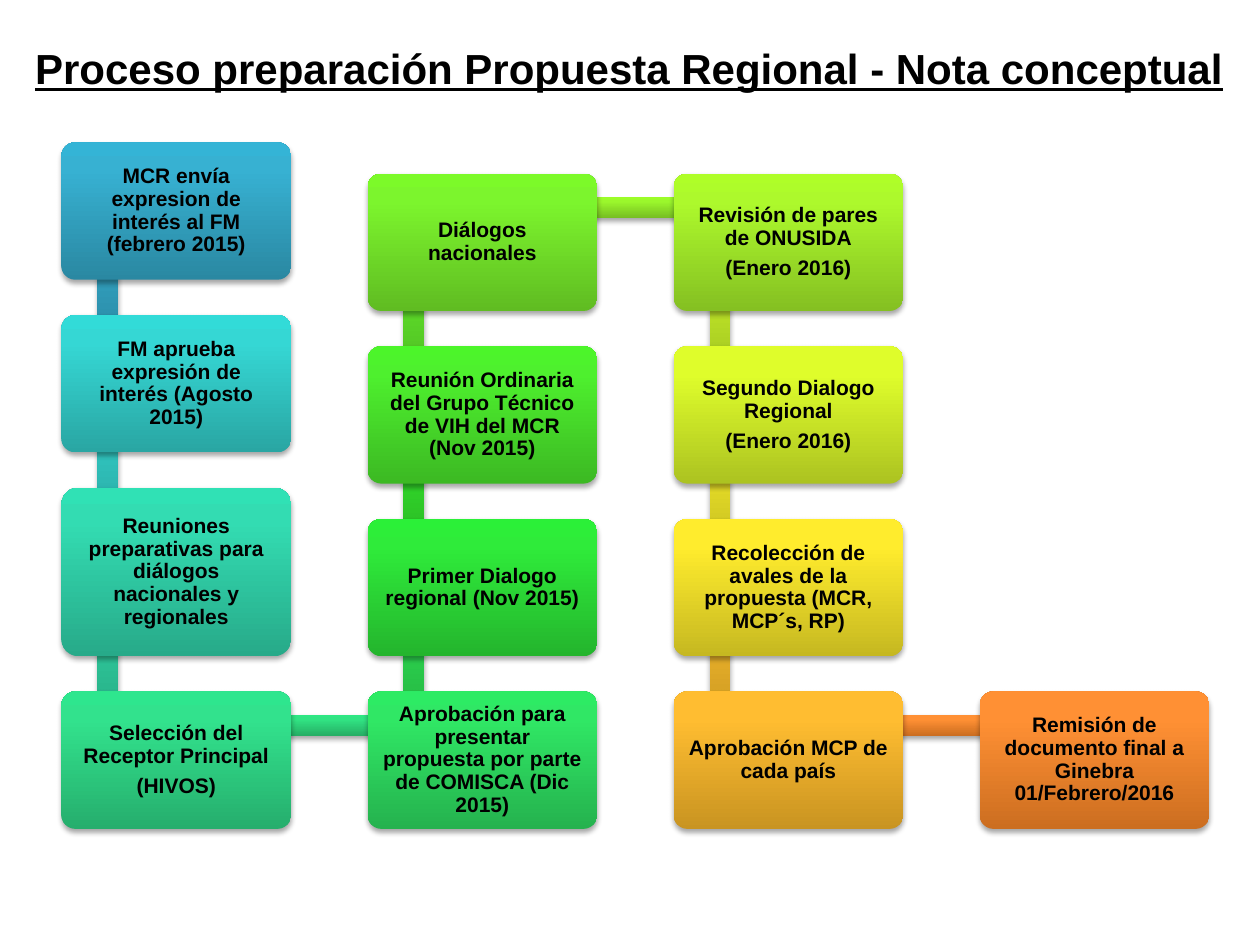
from copy import deepcopy

from lxml import etree
from pptx import Presentation
from pptx.dml.color import RGBColor
from pptx.enum.shapes import MSO_SHAPE
from pptx.enum.text import MSO_ANCHOR, PP_ALIGN
from pptx.oxml.ns import qn
from pptx.util import Cm, Pt

RECTANGLE = MSO_SHAPE.RECTANGLE
ROUNDED = MSO_SHAPE.ROUNDED_RECTANGLE
MIDDLE = MSO_ANCHOR.MIDDLE
CENTER = PP_ALIGN.CENTER
BLACK = RGBColor(0x00, 0x00, 0x00)
FONT = "Arial"

TITLE = "Proceso preparación Propuesta Regional - Nota conceptual"

# Steps in process order: column, paragraphs, gradient from bottom to top
STEPS = [
    (0, ["MCR envía expresion de interés al FM (febrero 2015)"], "2A88A2 37B1D2 34B4D6"),
    (0, ["FM aprueba expresión de interés (Agosto 2015)"], "29A6A3 35D7D4 32DBD8"),
    (0, ["Reuniones preparativas para diálogos nacionales y regionales"],
     "27AA89 33DCB2 30E1B5"),
    (0, ["Selección del Receptor Principal", "(HIVOS)"], "26AE6D 32E28D 2EE68E"),
    (1, ["Aprobación para presentar propuesta por parte de COMISCA (Dic 2015)"],
     "25B24E 30E765 2DEB64"),
    (1, ["Primer Dialogo regional (Nov 2015)"], "24B52D 2FEB3A 2BF038"),
    (1, ["Reunión Ordinaria del Grupo Técnico de VIH del MCR (Nov 2015)"],
     "3CB923 4EF02E 4CF52A"),
    (1, ["Diálogos nacionales"], "60BC22 7CF52D 7CFA29"),
    (2, ["Revisión de pares de ONUSIDA", "(Enero 2016)"], "85C022 ADF92C AFFE28"),
    (2, ["Segundo Dialogo Regional", "(Enero 2016)"], "ACC321 DFFD2B E1FF2B"),
    (2, ["Recolección de avales de la propuesta (MCR, MCP´s, RP)"],
     "C6B821 FFEC2D FFED2E"),
    (2, ["Aprobación MCP de cada país"], "C99421 FFBD31 FFBE32"),
    (3, ["Remisión de documento final a Ginebra 01/Febrero/2016"],
     "CC6E20 FF9034 FF9136"),
]
# Gradient of the bar that leads from each step to the next
BARS = [
    "2A88A2 37B1D2 34B4D6", "29A6A1 35D8D1 32DCD5", "27AB84 33DDAC 30E2AE",
    "26AF65 31E383 2EE783", "25B342 30E856 2CED54", "2AB724 36EE2E 33F22B",
    "4FBB23 67F32D 66F82A", "77BF22 9BF72C 9CFD28", "A1C221 D1FC2B D3FF2A",
    "C6BE21 FFF52C FFF52E", "C99721 FFC230 FFC232", "CC6E20 FF9034 FF9136",
]
STOPS = (0, 0.8, 1)

# Layout in centimetres
LEFT, COLUMN_STEP, BOTTOM = 1.24, 6.17, 16.71
BOX_WIDTH, BOX_HEIGHT, TALL_HEIGHT, GAP = 4.63, 2.77, 3.4, 0.71
TALL_STEP = 2
UPWARD_COLUMN = 1
BAR = 0.41
ANCHOR_X, ANCHOR_RISE = 0.93, 0.7


def place_steps():
    """Stack each column up from the bottom line; return (left, top, height)."""
    places = {}
    for column in range(4):
        members = [i for i, step in enumerate(STEPS) if step[0] == column]
        bottom = BOTTOM
        for i in members if column == UPWARD_COLUMN else reversed(members):
            height = TALL_HEIGHT if i == TALL_STEP else BOX_HEIGHT
            places[i] = (LEFT + column * COLUMN_STEP, bottom - height, height)
            bottom -= height + GAP
    return places


def add_shadow(shape):
    shape.shadow.inherit = False
    effects = shape._element.spPr.find(qn("a:effectLst"))
    shadow = etree.SubElement(
        effects, qn("a:outerShdw"), blurRad=str(Pt(3.1)), dist=str(Pt(1.8)),
        dir="5400000", rotWithShape="0")
    color = etree.SubElement(shadow, qn("a:srgbClr"), val="000000")
    etree.SubElement(color, qn("a:alpha"), val="35000")


def add_block(page, kind, left, top, width, height, colors):
    block = page.shapes.add_shape(kind, Cm(left), Cm(top), Cm(width), Cm(height))
    block.fill.gradient()
    block.fill.gradient_angle = 90
    stop_list = block._element.spPr.find(".//" + qn("a:gsLst"))
    stop_list.append(deepcopy(stop_list[-1]))
    for stop, position, color in zip(block.fill.gradient_stops, STOPS, colors.split()):
        stop.position = position
        stop.color.rgb = RGBColor.from_string(color)
    block.line.fill.background()
    add_shadow(block)
    return block


def set_font(para, size):
    para.font.name = FONT
    para.font.size = Pt(size)
    para.font.bold = True
    para.font.color.rgb = BLACK


def add_bar(page, start, end, colors):
    """Run a bar between the anchor points of two steps."""
    (x1, y1), (x2, y2) = [
        (left + ANCHOR_X, top + height / 2 - ANCHOR_RISE)
        for left, top, height in (start, end)]
    if x1 == x2:
        area = (x1 - BAR / 2, min(y1, y2), BAR, abs(y2 - y1))
    else:
        area = (x1, y1 - BAR / 2, x2 - x1, BAR)
    add_block(page, RECTANGLE, *area, colors)


def add_step(page, place, texts, colors):
    left, top, height = place
    box = add_block(page, ROUNDED, left, top, BOX_WIDTH, height, colors)
    box.adjustments[0] = 0.1
    frame = box.text_frame
    frame.word_wrap = True
    frame.vertical_anchor = MIDDLE
    frame.margin_left = frame.margin_right = Cm(0.2)
    frame.margin_top = frame.margin_bottom = Cm(0.2)
    for i, text in enumerate(texts):
        para = frame.add_paragraph() if i else frame.paragraphs[0]
        para.text = text
        para.alignment = CENTER
        para.line_spacing = 0.9
        para.space_after = Pt(4.2)
        set_font(para, 12)


def add_title(page):
    title = page.shapes.add_textbox(Cm(0.46), Cm(0.74), Cm(24.69), Cm(1.27))
    title.text_frame.word_wrap = True
    para = title.text_frame.paragraphs[0]
    para.text = TITLE
    set_font(para, 24)
    para.font.underline = True


def main():
    deck = Presentation()
    deck.slide_width, deck.slide_height = Cm(25.4), Cm(19.05)
    page = deck.slides.add_slide(deck.slide_layouts[6])
    places = place_steps()
    for i, (_, texts, colors) in enumerate(STEPS):
        if i < len(BARS):
            add_bar(page, places[i], places[i + 1], BARS[i])
        add_step(page, places[i], texts, colors)
    add_title(page)
    deck.save("out.pptx")


if __name__ == "__main__":
    main()
